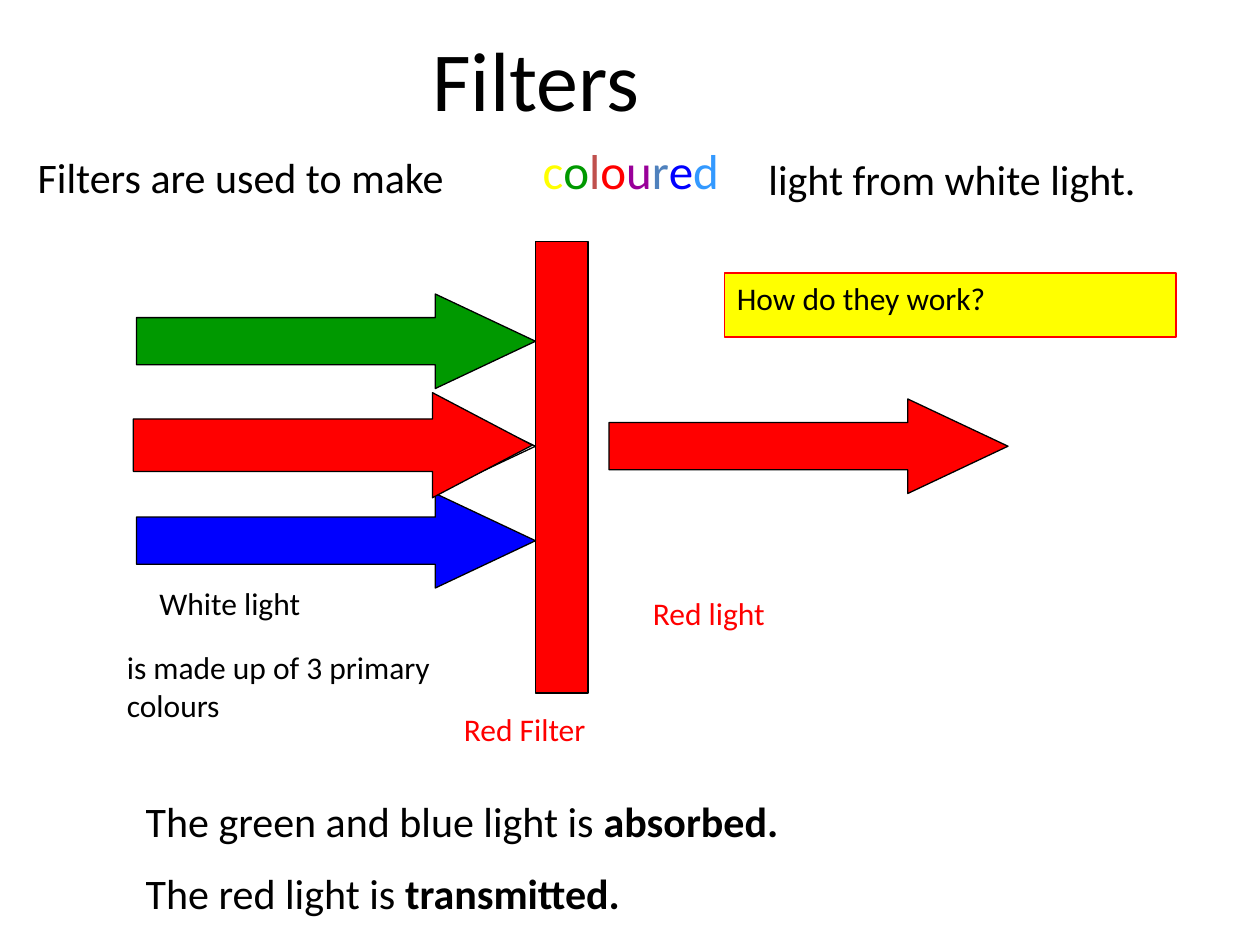
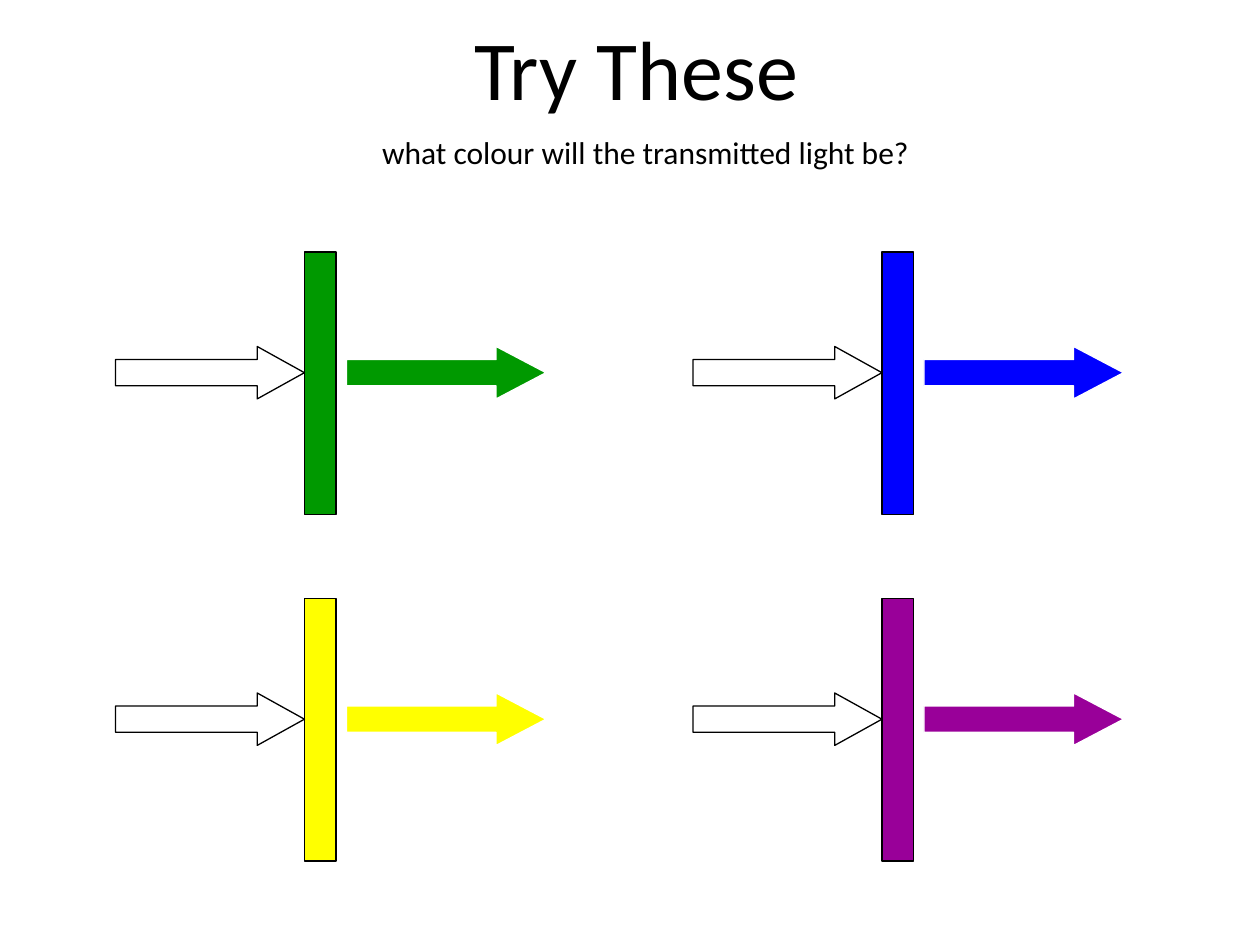
import dataclasses
import itertools
import typing

import pptx
import pptx.dml.color
import pptx.enum.shapes
import pptx.enum.text
import pptx.util

PX = 7620
SHAPES = pptx.enum.shapes.MSO_SHAPE
ALIGN = pptx.enum.text.PP_ALIGN


@dataclasses.dataclass(frozen=True)
class Theme:
    font: str = "Calibri"
    black: str = "000000"
    white: str = "FFFFFF"
    red: str = "FF0000"
    green: str = "009900"
    blue: str = "0000FF"
    yellow: str = "FFFF00"
    purple: str = "990099"
    brick: str = "C0504D"
    steel: str = "4F81BD"
    sky: str = "3399FF"
    title: int = 48
    accent: int = 28
    body: int = 24
    label: int = 18
    outline: float = 0.75


THEME = Theme()


class Area(typing.NamedTuple):
    left: int
    top: int
    width: int
    height: int

    def moved(self, across: int, down: int) -> "Area":
        return self._replace(left=self.left + across, top=self.top + down)


class Span(typing.NamedTuple):
    text: str
    size: int = THEME.label
    color: str = THEME.black
    bold: bool = False


Paras = list[list[Span]]


@dataclasses.dataclass(frozen=True)
class TextBox:
    area: Area
    paras: Paras
    align: ALIGN = ALIGN.LEFT


@dataclasses.dataclass(frozen=True)
class Block:
    area: Area
    fill: str
    line: str = THEME.black


@dataclasses.dataclass(frozen=True)
class Arrow(Block):
    head: float = 0.95


def rgb(color: str) -> pptx.dml.color.RGBColor:
    return pptx.dml.color.RGBColor.from_string(color)


def emu(area: Area) -> list[int]:
    return [length * PX for length in area]


def write_text(frame, paras: Paras, align: ALIGN = ALIGN.LEFT) -> None:
    frame.word_wrap = True
    frame.vertical_anchor = pptx.enum.text.MSO_ANCHOR.TOP
    for index, spans in enumerate(paras):
        para = frame.add_paragraph() if index else frame.paragraphs[0]
        para.alignment = align
        if index:
            para.space_before = pptx.util.Pt(spans[0].size / 2)
        for span in spans:
            run = para.add_run()
            run.text = span.text
            values = {
                "name": THEME.font,
                "size": pptx.util.Pt(span.size),
                "bold": span.bold,
            }
            for name, value in values.items():
                setattr(run.font, name, value)
            run.font.color.rgb = rgb(span.color)


def draw_text(slide, box: TextBox) -> None:
    shape = slide.shapes.add_textbox(*emu(box.area))
    write_text(shape.text_frame, box.paras, box.align)


def draw_block(slide, block: Block):
    kind = SHAPES.RIGHT_ARROW if isinstance(block, Arrow) else SHAPES.RECTANGLE
    shape = slide.shapes.add_shape(kind, *emu(block.area))
    shape.shadow.inherit = False
    shape.fill.solid()
    shape.fill.fore_color.rgb = rgb(block.fill)
    shape.line.color.rgb = rgb(block.line)
    shape.line.width = pptx.util.Pt(THEME.outline)
    if isinstance(block, Arrow):
        shape.adjustments[0] = 0.5
        shape.adjustments[1] = block.head
    return shape


def build_filters(slide) -> None:
    draw_block(slide, Block(Area(510, 230, 50, 430), THEME.red))
    question = Block(Area(690, 260, 430, 61), THEME.yellow, THEME.red)
    write_text(draw_block(slide, question).text_frame, [[Span("How do they work?")]])

    beam = Area(130, 280, 380, 90)
    beam_head = 1.06
    arrows = [
        Arrow(beam, THEME.green, head=beam_head),
        Arrow(beam.moved(0, 190), THEME.blue, head=beam_head),
        Arrow(beam.moved(0, 100), THEME.white, head=beam_head),
        Arrow(beam.moved(450, 100), THEME.red, head=beam_head),
        Arrow(Area(127, 374, 380, 100), THEME.red),
    ]
    for arrow in arrows:
        draw_block(slide, arrow)

    rainbow = [THEME.yellow, THEME.green, THEME.brick, THEME.red,
               THEME.purple, THEME.steel, THEME.blue, THEME.sky]
    coloured = [Span(letter, THEME.accent, color)
                for letter, color in zip("coloured", rainbow)]
    conclusions = [
        [Span(start, THEME.body), Span(result, THEME.body, bold=True)]
        for start, result in [("The green and blue light is ", "absorbed."),
                              ("The red light is ", "transmitted.")]
    ]
    boxes = [
        TextBox(Area(400, 20, 570, 108), [[Span("Filters", THEME.title)]]),
        TextBox(Area(24, 138, 1160, 60), [[Span("Filters are used to make", THEME.body)]]),
        TextBox(Area(505, 128, 194, 68), [coloured]),
        TextBox(Area(720, 140, 380, 60), [[Span("light from white light.", THEME.body)]]),
        TextBox(Area(140, 550, 330, 60), [[Span("White light")]]),
        TextBox(Area(109, 611, 380, 108), [[Span("is made up of 3 primary colours")]]),
        TextBox(Area(610, 560, 330, 60), [[Span("Red light", color=THEME.red)]]),
        TextBox(Area(430, 670, 290, 60), [[Span("Red Filter", color=THEME.red)]]),
        TextBox(Area(127, 752, 900, 133), conclusions),
    ]
    for box in boxes:
        draw_text(slide, box)


def build_exercise(slide) -> None:
    heading = [
        [Span("Try These ", THEME.title)],
        [Span("what colour will the transmitted light be?")],
    ]
    draw_text(slide, TextBox(Area(170, 10, 890, 180), heading, ALIGN.CENTER))

    column_step, row_step = 550, 330
    colors = [THEME.green, THEME.blue, THEME.yellow, THEME.purple]
    for (row, column), color in zip(itertools.product(range(2), repeat=2), colors):
        offset = (column * column_step, row * row_step)
        parts = [
            Block(Area(290, 240, 30, 250).moved(*offset), color),
            Arrow(Area(110, 330, 180, 50).moved(*offset), THEME.white, head=0.9),
            Arrow(Area(330, 330, 190, 50).moved(*offset), color, THEME.white),
        ]
        for part in parts:
            draw_block(slide, part)


def main() -> None:
    deck = pptx.Presentation()
    deck.slide_width, deck.slide_height = 1200 * PX, 900 * PX
    for build_page in (build_filters, build_exercise):
        build_page(deck.slides.add_slide(deck.slide_layouts[6]))
    deck.save("out.pptx")


if __name__ == "__main__":
    main()
